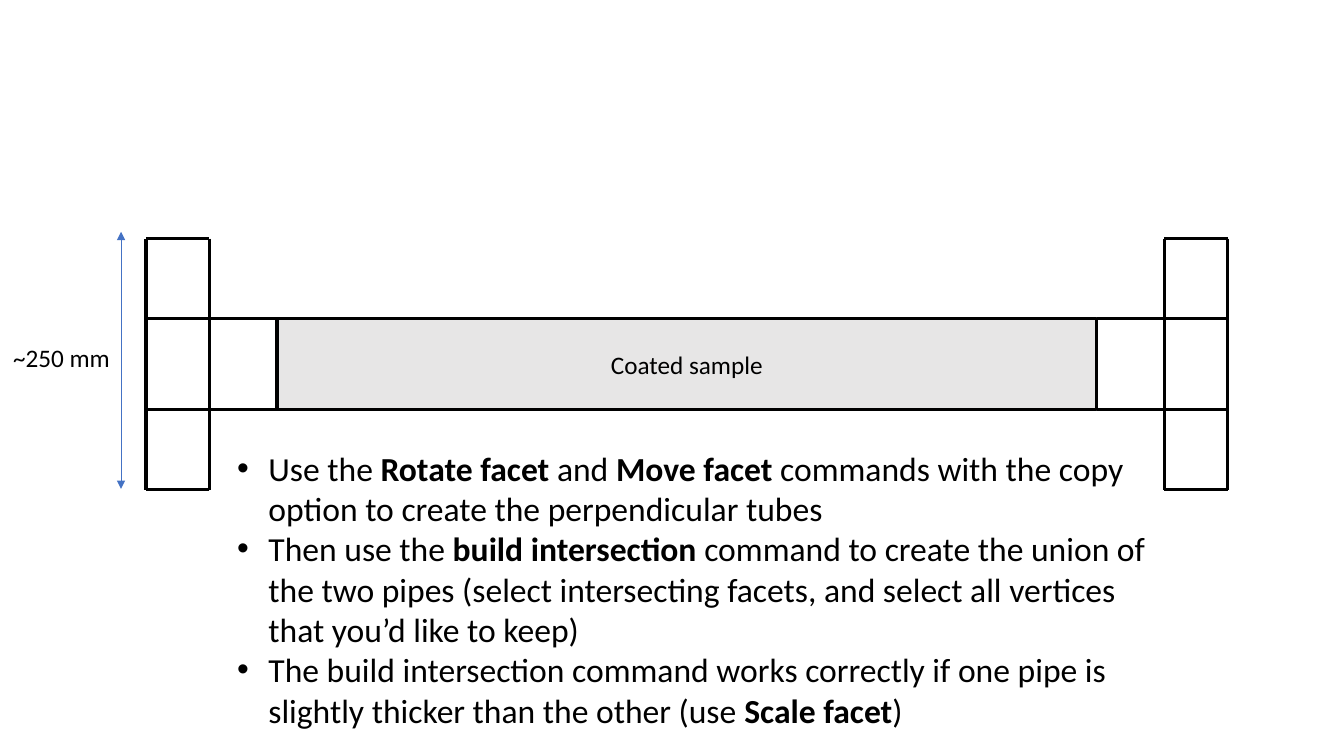
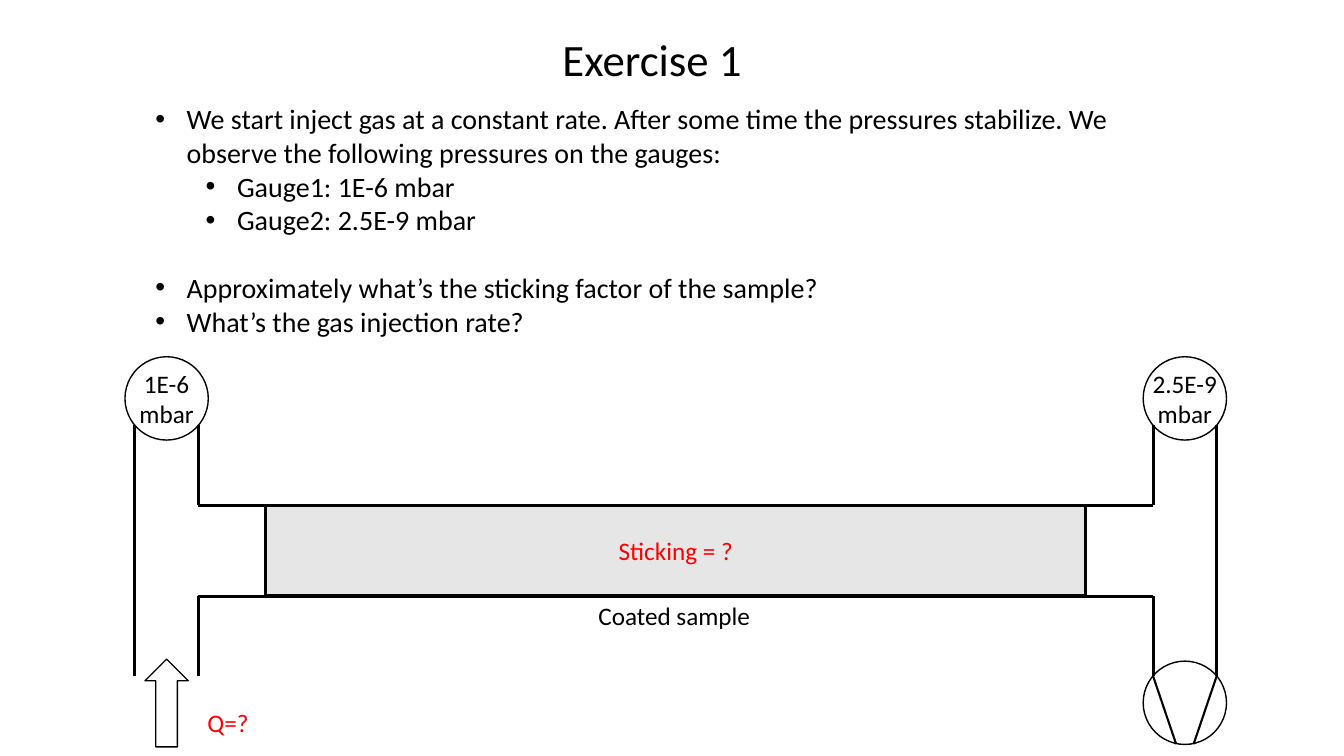
from pptx import Presentation
from pptx.dml.color import RGBColor
from pptx.enum.shapes import MSO_CONNECTOR, MSO_SHAPE
from pptx.enum.text import MSO_ANCHOR, MSO_AUTO_SIZE, PP_ALIGN
from pptx.oxml.ns import qn
from pptx.util import Cm, Pt
from lxml.etree import SubElement

# Shared look
rgb = RGBColor.from_string
FONT = "Calibri"
BLACK, RED, GREY, BLUE = "000000", "FF0000", "E7E6E6", "4472C4"
PIPE, OUTLINE = 2.25, 1

# Pipe geometry in cm: offsets from the middle and the top of the sample
SAMPLE, INNER, OUTER = 10.33, 12.03, 13.63
TUBE_MIDDLE = (INNER + OUTER) / 2
HEIGHT, ABOVE, BELOW = 2.29, -2.02, 4.31
RADIUS = 1.05


def write(frame, text, size=18, color=BLACK, align=PP_ALIGN.LEFT,
          level=None, before=0, wrap=False):
    """Add one paragraph; words between asterisks are bold, a level gives a bullet."""
    frame.word_wrap = wrap
    frame.auto_size = MSO_AUTO_SIZE.NONE
    paragraph = frame.paragraphs[0]
    if paragraph.runs:
        paragraph = frame.add_paragraph()
    for number, part in enumerate(text.split("*")):
        run = paragraph.add_run()
        run.text = part
        run.font.name, run.font.size = FONT, Pt(size)
        run.font.bold = number % 2 == 1
        run.font.color.rgb = rgb(color)
    paragraph.alignment = align
    paragraph.line_spacing = 1.0
    paragraph.space_before, paragraph.space_after = Pt(before), Pt(0)
    if level is not None:
        paragraph.level = level
        properties = paragraph._p.get_or_add_pPr()
        properties.set("marL", str(Cm(0.79 + 1.27 * level)))
        properties.set("indent", str(Cm(-0.79)))
        SubElement(properties, qn("a:buFont")).set("typeface", "Arial")
        SubElement(properties, qn("a:buChar")).set("char", "•")


def draw_line(slide, x1, y1, x2, y2, width=PIPE, color=BLACK, arrows=False):
    connector = slide.shapes.add_connector(
        MSO_CONNECTOR.STRAIGHT, Cm(x1), Cm(y1), Cm(x2), Cm(y2))
    connector.line.width = Pt(width)
    connector.line.color.rgb = rgb(color)
    properties = connector._element.spPr
    if arrows:
        for end in ("a:headEnd", "a:tailEnd"):
            SubElement(properties.find(qn("a:ln")), qn(end)).set("type", "triangle")
    SubElement(properties, qn("a:effectLst"))


deck = Presentation()
deck.slide_width, deck.slide_height = Cm(33.87), Cm(19.05)
build, exercise = [deck.slides.add_slide(deck.slide_layouts[1]) for _ in range(2)]

# Titles: only the exercise has one
build_title = build.shapes.title._element
build_title.getparent().remove(build_title)
heading = exercise.shapes.title
heading.left, heading.top, heading.width, heading.height = Cm(13.92), Cm(0.66), Cm(5.08), Cm(1.63)
write(heading.text_frame, "Exercise 1", size=32)

# Lists: slide, place, text size, then level, space before and text of each item
lists = [
    (build, (5.72, 11.15, 24.08, 7.44), 24, [
        (0, 0, "Use the *Rotate facet *and *Move facet* commands with the copy option "
               "to create the perpendicular tubes"),
        (0, 0, "Then use the *build intersection* command to create the union of the two "
               "pipes (select intersecting facets, and select all vertices that you’d like to keep)"),
        (0, 0, "The build intersection command works correctly if one pipe is slightly "
               "thicker than the other (use *Scale facet*)"),
    ]),
    (exercise, (3.66, 2.44, 24.92, 6.25), 20, [
        (0, 0, "We start inject gas at a constant rate. After some time the pressures "
               "stabilize. We observe the following pressures on the gauges:"),
        (1, 0, "Gauge1: 1E-6 mbar"),
        (1, 0, "Gauge2: 2.5E-9 mbar"),
        (0, 24.4, "Approximately what’s the sticking factor of the sample?"),
        (0, 0, "What’s the gas injection rate?"),
    ]),
]
for slide, place, size, items in lists:
    steps = slide.placeholders[1]
    steps.left, steps.top, steps.width, steps.height = map(Cm, place)
    steps.text_frame.vertical_anchor = MSO_ANCHOR.TOP
    for level, before, text in items:
        write(steps.text_frame, text, size=size, level=level, before=before, wrap=True)

# Pipe with the coated sample
pipes = [
    (build, 17.31, 8.03, "Coated sample", BLACK, OUTER),
    (exercise, 17.03, 12.73, "Sticking = ?", RED, INNER),
]
for slide, middle, top, label, color, neck_end in pipes:
    sample = slide.shapes.add_shape(
        MSO_SHAPE.RECTANGLE, Cm(middle - SAMPLE), Cm(top), Cm(2 * SAMPLE), Cm(HEIGHT))
    sample.shadow.inherit = False
    sample.fill.solid()
    sample.fill.fore_color.rgb = rgb(GREY)
    sample.line.color.rgb = rgb(BLACK)
    sample.line.width = Pt(PIPE)
    write(sample.text_frame, label, color=color, align=PP_ALIGN.CENTER)

    for side in (-1, 1):
        inner, outer = middle + side * INNER, middle + side * OUTER
        for y in (top, top + HEIGHT):
            draw_line(slide, middle + side * SAMPLE, y, middle + side * neck_end, y)
        draw_line(slide, outer, top + ABOVE, outer, top + BELOW)
        if slide is build:  # closed tubes crossing the pipe
            draw_line(slide, inner, top + ABOVE, inner, top + BELOW)
            for y in (top + ABOVE, top + BELOW):
                draw_line(slide, inner, y, outer, y)
        else:  # open tubes joined to the pipe
            draw_line(slide, inner, top + ABOVE, inner, top)
            draw_line(slide, inner, top + HEIGHT, inner, top + BELOW)

# Height of the perpendicular tubes
draw_line(build, 3.05, 5.84, 3.05, 12.32, width=0.5, color=BLUE, arrows=True)

# Gauges, pump and gas inlet
left_tube, right_tube = middle - TUBE_MIDDLE, middle + TUBE_MIDDLE
devices = [
    (MSO_SHAPE.OVAL, left_tube, 8.99, 2 * RADIUS, 2 * RADIUS, ["1E-6", "mbar"]),
    (MSO_SHAPE.OVAL, right_tube, 8.99, 2 * RADIUS, 2 * RADIUS, ["2.5E-9", "mbar"]),
    (MSO_SHAPE.OVAL, right_tube, 16.66, 2 * RADIUS, 2 * RADIUS, []),
    (MSO_SHAPE.UP_ARROW, left_tube, 16.61, 1.09, 2.21, []),
]
for kind, x, y, width, height, reading in devices:
    device = exercise.shapes.add_shape(kind, Cm(x - width / 2), Cm(y), Cm(width), Cm(height))
    device.shadow.inherit = False
    device.fill.background()
    device.line.color.rgb = rgb(BLACK)
    device.line.width = Pt(OUTLINE)
    for text in reading:
        write(device.text_frame, text, align=PP_ALIGN.CENTER)
for side in (-1, 1):
    draw_line(exercise, right_tube + side * 0.8, top + BELOW,
              right_tube + side * 0.22, 18.75, width=1.5)

# Free labels
labels = [
    (build, 0.08, 8.51, 2.97, "~250 mm", BLACK),
    (exercise, 14.83, 15.01, 4.39, "Coated sample", BLACK),
    (exercise, 4.98, 17.7, 1.57, "Q=?", RED),
]
for slide, x, y, width, text, color in labels:
    label_box = slide.shapes.add_textbox(Cm(x), Cm(y), Cm(width), Cm(1.02))
    write(label_box.text_frame, text, color=color)

deck.save("out.pptx")
